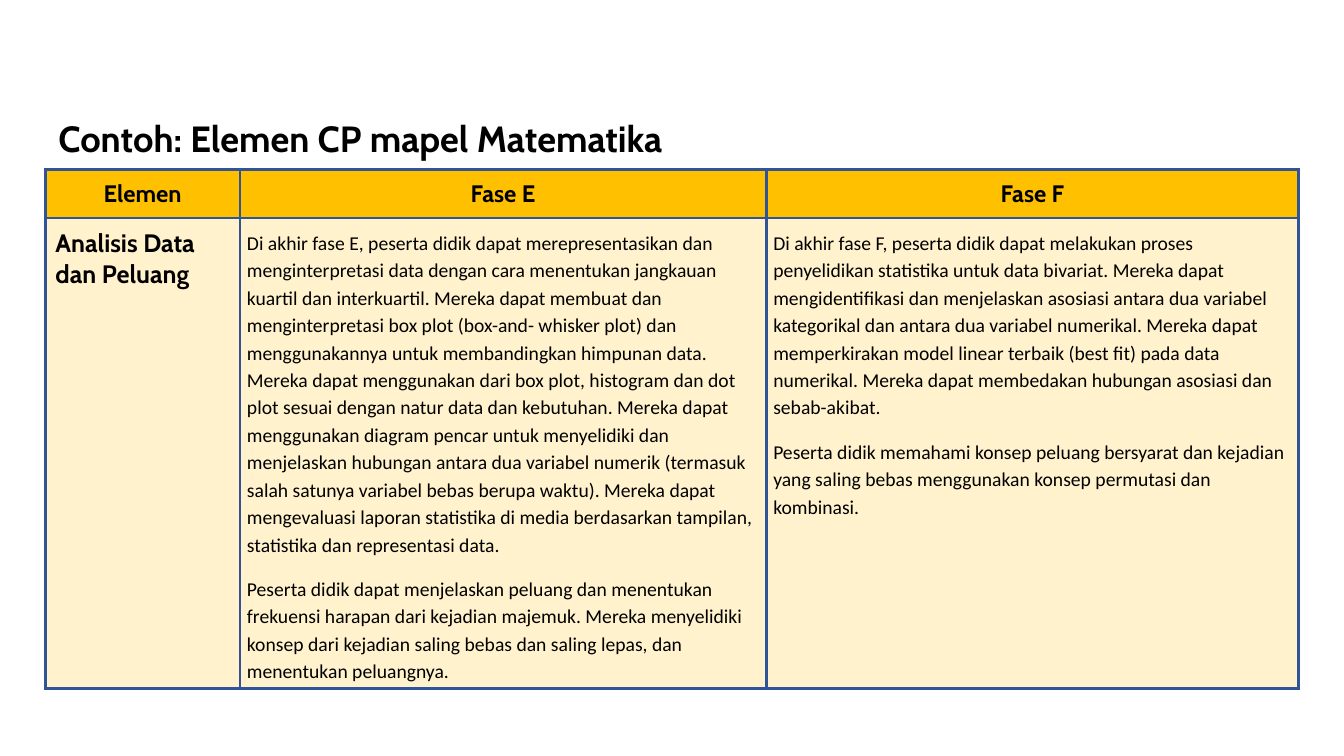
"""Build a slide with a table of mathematics learning outcomes."""
from lxml import etree
from pptx import Presentation
from pptx.dml.color import RGBColor
from pptx.enum.text import MSO_ANCHOR, PP_ALIGN
from pptx.oxml.ns import qn
from pptx.util import Inches, Pt

LEFT, CENTER = PP_ALIGN.LEFT, PP_ALIGN.CENTER
TOP = MSO_ANCHOR.TOP
GOLD, CREAM, BLUE, BLACK = "FFC000", "FFF2CC", "2F5597", "000000"


def write(box, *texts, size, font="Cabin", bold=True, align=LEFT, line=None, gap=0):
    frame = box.text_frame
    frame.word_wrap = True
    for i, text in enumerate(texts):
        para = frame.add_paragraph() if i else frame.paragraphs[0]
        para.alignment = align
        if line:
            para.line_spacing = line
        if i:
            para.space_before = Pt(gap)
        run = para.add_run()
        run.text = text
        run.font.name, run.font.size, run.font.bold = font, Pt(size), bold
        run.font.color.rgb = RGBColor.from_string(BLACK)


def style(cell, fill, side):
    cell.margin_left = cell.margin_right = Inches(side)
    cell.margin_top = cell.margin_bottom = Inches(0.1)
    cell.vertical_anchor = TOP
    cell.fill.solid()
    cell.fill.fore_color.rgb = RGBColor.from_string(fill)
    props = cell._tc.get_or_add_tcPr()
    for i, edge in enumerate(("a:lnL", "a:lnR", "a:lnT", "a:lnB")):
        border = etree.Element(qn(edge), w=str(Pt(2.25)))
        paint = etree.SubElement(border, qn("a:solidFill"))
        etree.SubElement(paint, qn("a:srgbClr"), val=BLUE)
        props.insert(i, border)


deck = Presentation()
deck.slide_width, deck.slide_height = Inches(13.33), Inches(7.5)
slide = deck.slides.add_slide(deck.slide_layouts[6])

title = slide.shapes.add_textbox(Inches(0.45), Inches(1.02), Inches(11.77), Inches(0.46))
frame = title.text_frame
frame.margin_left = frame.margin_right = Inches(0.13)
frame.margin_top = frame.margin_bottom = Inches(0.13)
frame.vertical_anchor = TOP
write(title, "Contoh: Elemen CP mapel Matematika", size=26)

table = slide.shapes.add_table(
    2, 3, Inches(0.45), Inches(1.68), Inches(12.43), Inches(5.14)).table
for col, width in zip(table.columns, (1.93, 5.22, 5.28)):
    col.width = Inches(width)
for row, height in zip(table.rows, (0.47, 4.67)):
    row.height = Inches(height)

for i, head in enumerate(("Elemen", "Fase E", "Fase F")):
    cell = table.cell(0, i)
    style(cell, GOLD, 0.1)
    write(cell, head, size=17, align=CENTER)

label = table.cell(1, 0)
style(label, CREAM, 0.1)
write(label, "Analisis Data dan Peluang", size=18)

phases = (
    ("Di akhir fase E, peserta didik dapat merepresentasikan dan menginterpretasi data "
     "dengan cara menentukan jangkauan kuartil dan interkuartil. Mereka dapat membuat dan "
     "menginterpretasi box plot (box-and- whisker plot) dan menggunakannya untuk "
     "membandingkan himpunan data. Mereka dapat menggunakan dari box plot, histogram dan "
     "dot plot sesuai dengan natur data dan kebutuhan. Mereka dapat menggunakan diagram "
     "pencar untuk menyelidiki dan menjelaskan hubungan antara dua variabel numerik "
     "(termasuk salah satunya variabel bebas berupa waktu). Mereka dapat mengevaluasi "
     "laporan statistika di media berdasarkan tampilan, statistika dan representasi data.",
     "Peserta didik dapat menjelaskan peluang dan menentukan frekuensi harapan dari "
     "kejadian majemuk. Mereka menyelidiki konsep dari kejadian saling bebas dan saling "
     "lepas, dan menentukan peluangnya."),
    ("Di akhir fase F, peserta didik dapat melakukan proses penyelidikan statistika untuk "
     "data bivariat. Mereka dapat mengidentifikasi dan menjelaskan asosiasi antara dua "
     "variabel kategorikal dan antara dua variabel numerikal. Mereka dapat memperkirakan "
     "model linear terbaik (best fit) pada data numerikal. Mereka dapat membedakan "
     "hubungan asosiasi dan sebab-akibat.",
     "Peserta didik memahami konsep peluang bersyarat dan kejadian yang saling bebas "
     "menggunakan konsep permutasi dan kombinasi."),
)
for i, texts in enumerate(phases, 1):
    cell = table.cell(1, i)
    style(cell, CREAM, 0.07)
    write(cell, *texts, size=14, font="Calibri", bold=False, line=1.15, gap=12)

deck.save("out.pptx")
